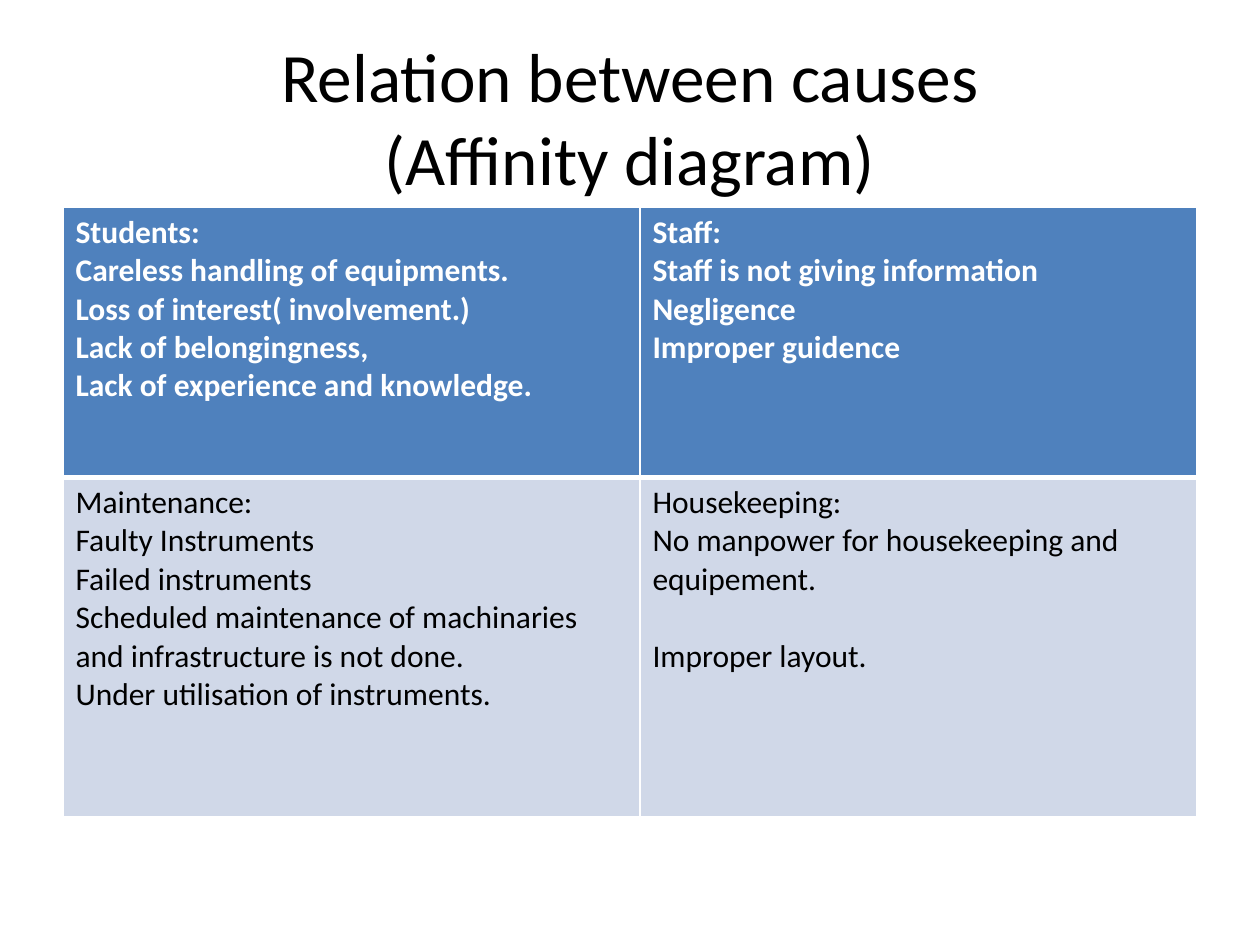
from lxml.etree import SubElement
from pptx import Presentation
from pptx.dml.color import RGBColor as RGB
from pptx.enum.text import MSO_ANCHOR as Anchor, MSO_AUTO_SIZE as AutoSize, PP_ALIGN as Align
from pptx.oxml.ns import qn
from pptx.util import Cm, Pt

COLORS = {"text": "000000", "white": "FFFFFF", "header": "4F81BD", "body": "D0D8E8"}


def write(para, text, size=18, color="text", bold=False, align=Align.LEFT, before=0):
    para.text = text
    para.alignment = align
    para.space_before = Pt(before)
    for span in para.runs:
        span.font.name = "Calibri"
        span.font.size = Pt(size)
        span.font.bold = bold
        span.font.color.rgb = RGB.from_string(COLORS[color])
    # Line breaks carry their own text size
    for line_break in para._p.findall(qn("a:br")):
        SubElement(line_break, qn("a:rPr"), sz=str(round(size * 100)))


def add_border(cell, side, width):
    line = SubElement(cell._tc.get_or_add_tcPr(), qn(f"a:ln{side}"), w=str(Pt(width)))
    fill = SubElement(line, qn("a:solidFill"))
    SubElement(fill, qn("a:srgbClr"), val=COLORS["white"])


deck = Presentation()
deck.slide_width, deck.slide_height = Cm(25.4), Cm(19.05)
page = deck.slides.add_slide(deck.slide_layouts[5])

# Title
title = page.shapes.title
title.left, title.top, title.width, title.height = Cm(1.27), Cm(0.76), Cm(22.86), Cm(3.18)
frame = title.text_frame
frame.word_wrap = True
frame.auto_size = AutoSize.NONE
frame.vertical_anchor = Anchor.MIDDLE
write(frame.paragraphs[0], "Relation between causes\v(Affinity diagram)",
      size=39.6, align=Align.CENTER)

# Cause groups: one list of lines per cell
groups = [
    [["Students:", "Careless handling of equipments.", "Loss of interest( involvement.)",
      "Lack of belongingness,", "Lack of experience and knowledge."],
     ["Staff:", "Staff is not giving information", "Negligence", "Improper guidence"]],
    [["Maintenance:", "Faulty Instruments", "Failed instruments",
      "Scheduled maintenance of machinaries and infrastructure is not done.",
      "Under utilisation of instruments."],
     ["Housekeeping:", "No manpower for housekeeping and equipement.", "Improper layout."]],
]
SPACED_LINE = "Improper layout."

# Affinity table
table = page.shapes.add_table(2, 2, Cm(1.27), Cm(4.17), Cm(22.86), Cm(12.3)).table
for column, width in zip(table.columns, (11.63, 11.23)):
    column.width = Cm(width)
for row, height in zip(table.rows, (5.45, 6.85)):
    row.height = Cm(height)

for r, row_groups in enumerate(groups):
    header = r == 0
    for c, lines in enumerate(row_groups):
        cell = table.cell(r, c)
        # The rule between the two rows is the heavy one
        for side, width in (("L", 1), ("R", 1), ("T", 1 if header else 3), ("B", 3 if header else 1)):
            add_border(cell, side, width)
        cell.fill.solid()
        cell.fill.fore_color.rgb = RGB.from_string(COLORS["header" if header else "body"])
        for i, line in enumerate(lines):
            frame = cell.text_frame
            para = frame.add_paragraph() if i else frame.paragraphs[0]
            write(para, line, color="white" if header else "text", bold=header,
                  before=22 if line == SPACED_LINE else 0)

deck.save("out.pptx")
